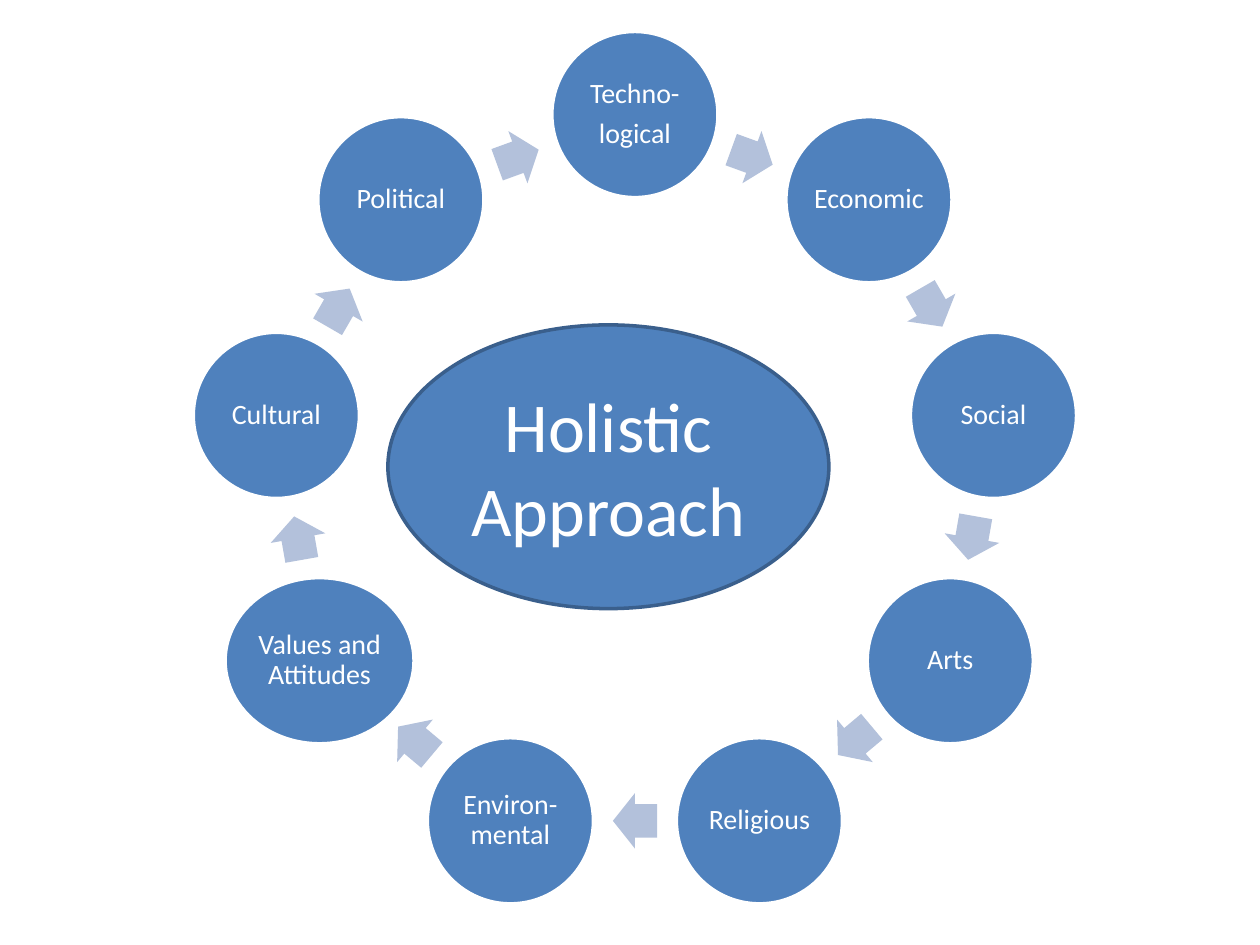
import math

from pptx import Presentation
from pptx import util as u
from pptx.dml import color
from pptx.enum import shapes, text

BLUE, DARK_BLUE, PALE_BLUE, WHITE = "4F81BD", "3A5F8C", "B3C1DB", "FFFFFF"
FACTORS = [
    "Techno-\nlogical", "Economic", "Social", "Arts", "Religious",
    "Environ-mental", "Values and Attitudes", "Cultural", "Political",
]
WIDE_FACTOR = "Values and Attitudes"
DISC, WIDE_DISC = 3.35, 3.81
ARROW_WIDTH, ARROW_HEIGHT = 0.89, 1.12
RING_PARAGRAPH = {"line_spacing": 0.9, "space_after": u.Pt(5.6)}
RING_MARGINS = dict.fromkeys(
    ["margin_left", "margin_top", "margin_right", "margin_bottom"], u.Cm(0.05)
)


def set_attributes(target, values):
    for name, value in values.items():
        setattr(target, name, value)


def rgb(value):
    return color.RGBColor.from_string(value)


def add_filled_shape(slide, kind, box, fill, line=None):
    shape = slide.shapes.add_shape(kind, *[u.Cm(length) for length in box])
    shape.shadow.inherit = False
    shape.fill.solid()
    shape.fill.fore_color.rgb = rgb(fill)
    if line:
        shape.line.color.rgb = rgb(line)
        shape.line.width = u.Pt(2)
    else:
        shape.line.fill.background()
    return shape


def write_text(shape, wording, size, frame_format=None, paragraph_format=None):
    frame = shape.text_frame
    frame.text = wording
    set_attributes(frame, {
        "word_wrap": True,
        "vertical_anchor": text.MSO_ANCHOR.MIDDLE,
        **(frame_format or {}),
    })
    for paragraph in frame.paragraphs:
        set_attributes(paragraph, {
            "alignment": text.PP_ALIGN.CENTER, **(paragraph_format or {}),
        })
        for run in paragraph.runs:
            set_attributes(run.font, {"name": "Calibri", "size": u.Pt(size)})
            run.font.color.rgb = rgb(WHITE)


def box_on_ring(ring, degrees, width, height):
    left, top, diameter = ring
    radius = diameter / 2
    angle = math.radians(degrees)
    center_x = left + radius + radius * math.sin(angle)
    center_y = top + radius - radius * math.cos(angle)
    return center_x - width / 2, center_y - height / 2, width, height


def add_factor_ring(slide, ring):
    step = 360 / len(FACTORS)
    apothem = ring[2] / 2 * math.cos(math.radians(step / 2))
    inset = ring[2] / 2 - apothem
    arrow_ring = ring[0] + inset, ring[1] + inset, 2 * apothem
    for index, factor in enumerate(FACTORS):
        width = WIDE_DISC if factor == WIDE_FACTOR else DISC
        disc = add_filled_shape(
            slide, shapes.MSO_SHAPE.OVAL,
            box_on_ring(ring, index * step, width, DISC), BLUE, WHITE,
        )
        write_text(disc, factor, 16, RING_MARGINS, RING_PARAGRAPH)
        direction = (index + 0.5) * step
        arrow = add_filled_shape(
            slide, shapes.MSO_SHAPE.RIGHT_ARROW,
            box_on_ring(arrow_ring, direction, ARROW_WIDTH, ARROW_HEIGHT),
            PALE_BLUE,
        )
        arrow.rotation = direction
        arrow.adjustments[0] = 0.6
        arrow.adjustments[1] = 0.5


def add_core(slide, box):
    core = add_filled_shape(slide, shapes.MSO_SHAPE.OVAL, box, BLUE, DARK_BLUE)
    write_text(core, "Holistic Approach", 40)


def main():
    presentation = Presentation()
    set_attributes(presentation, {
        "slide_width": u.Cm(25.4), "slide_height": u.Cm(19.05),
    })
    slide = presentation.slides.add_slide(presentation.slide_layouts[6])
    add_factor_ring(slide, (5.46, 2.31, 14.68))
    add_core(slide, (7.82, 6.55, 8.89, 5.72))
    presentation.save("out.pptx")


if __name__ == "__main__":
    main()
